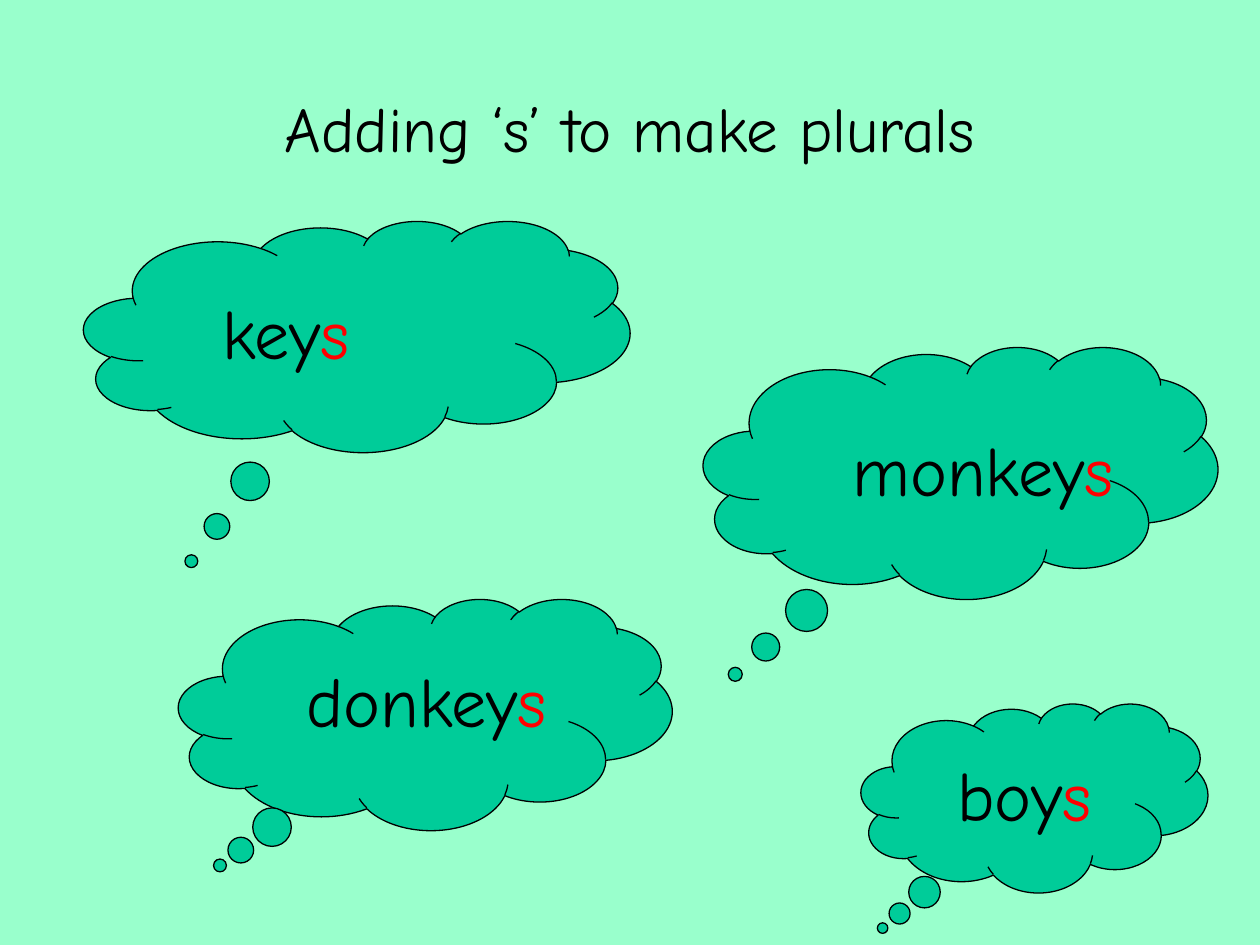
from dataclasses import dataclass

from lxml.etree import SubElement
from pptx import Presentation
from pptx.dml.color import RGBColor
from pptx.enum.shapes import MSO_SHAPE
from pptx.enum.text import MSO_AUTO_SIZE, PP_ALIGN
from pptx.oxml.ns import qn
from pptx.util import Cm, Pt


@dataclass(frozen=True)
class Theme:
    font: str = "Comic Neue"
    background: RGBColor = RGBColor(0x99, 0xFF, 0xCC)
    cloud: RGBColor = RGBColor(0x00, 0xCC, 0x99)
    ink: RGBColor = RGBColor(0x00, 0x00, 0x00)
    ending: RGBColor = RGBColor(0xFF, 0x00, 0x00)
    title_size: int = 36
    word_size: int = 40
    outline: float = 0.75


THEME = Theme()

# Each cloud: word stem, cloud box, tail point, offset and width of the word (cm)
CLOUDS = [
    ("key", (1.69, 4.45, 11.01, 4.66), (-0.303, 0.973), (2.54, 1.27), 6.99),
    ("monkey", (14.18, 6.99, 10.37, 5.08), (-0.438, 0.8), (2.75, 1.48), 6.99),
    ("donkey", (3.6, 12.07, 9.95, 4.66), (-0.416, 0.654), (2.33, 1.06), 6.99),
    ("boy", (17.36, 14.18, 6.99, 3.81), (-0.438, 0.689), (1.69, 0.85), 4.23),
]


def add_text(page, box, parts, size, align=PP_ALIGN.LEFT):
    """Add one line of text made of (wording, colour) parts."""
    text_box = page.shapes.add_textbox(*(Cm(length) for length in box))
    frame = text_box.text_frame
    frame.word_wrap = True
    frame.auto_size = MSO_AUTO_SIZE.SHAPE_TO_FIT_TEXT
    para = frame.paragraphs[0]
    para.alignment = align
    # Spacing relative to the type size
    before = SubElement(para._p.get_or_add_pPr(), qn("a:spcBef"))
    SubElement(before, qn("a:spcPct"), val="50000")
    for wording, colour in parts:
        span = para.add_run()
        span.text = wording
        span.font.name = THEME.font
        span.font.size = Pt(size)
        span.font.color.rgb = colour


def add_title(page, box):
    add_text(page, box, [("Adding ‘s’ to make plurals", THEME.ink)],
             size=THEME.title_size, align=PP_ALIGN.CENTER)


def add_word_cloud(page, box, stem, tail, offset, word_width):
    # Thought bubble
    cloud = page.shapes.add_shape(MSO_SHAPE.CLOUD_CALLOUT,
                                  *(Cm(length) for length in box))
    cloud.adjustments[0], cloud.adjustments[1] = tail
    cloud.shadow.inherit = False
    cloud.fill.solid()
    cloud.fill.fore_color.rgb = THEME.cloud
    cloud.line.color.rgb = THEME.ink
    cloud.line.width = Pt(THEME.outline)

    # Word with its plural ending picked out
    left, top = box[0] + offset[0], box[1] + offset[1]
    add_text(page, (left, top, word_width, 1.96),
             [(stem, THEME.ink), ("s", THEME.ending)], size=THEME.word_size)


def main():
    deck = Presentation()
    deck.slide_width, deck.slide_height = Cm(25.4), Cm(19.05)
    page = deck.slides.add_slide(deck.slide_layouts[6])
    page.background.fill.solid()
    page.background.fill.fore_color.rgb = THEME.background

    add_title(page, (2.12, 1.69, 21.16, 1.78))
    for stem, box, tail, offset, word_width in CLOUDS:
        add_word_cloud(page, box, stem, tail, offset, word_width)

    deck.save("out.pptx")


if __name__ == "__main__":
    main()
